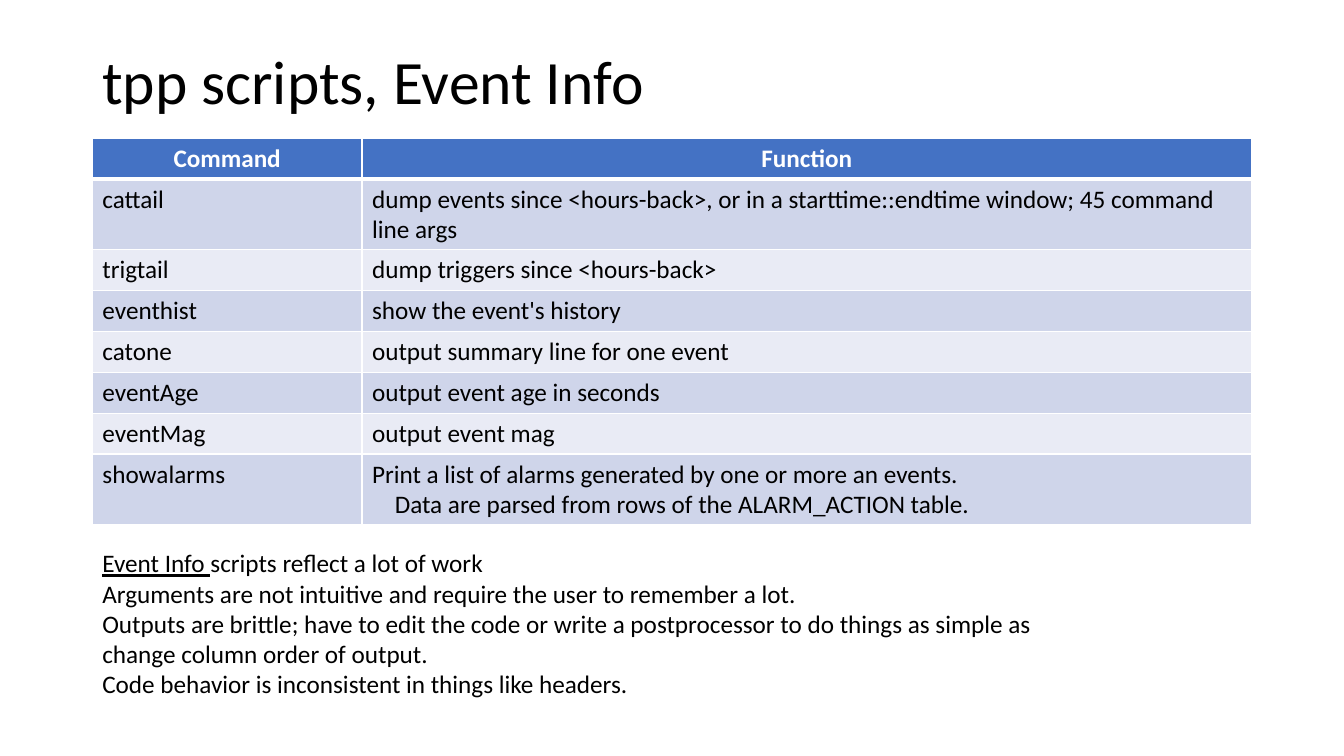
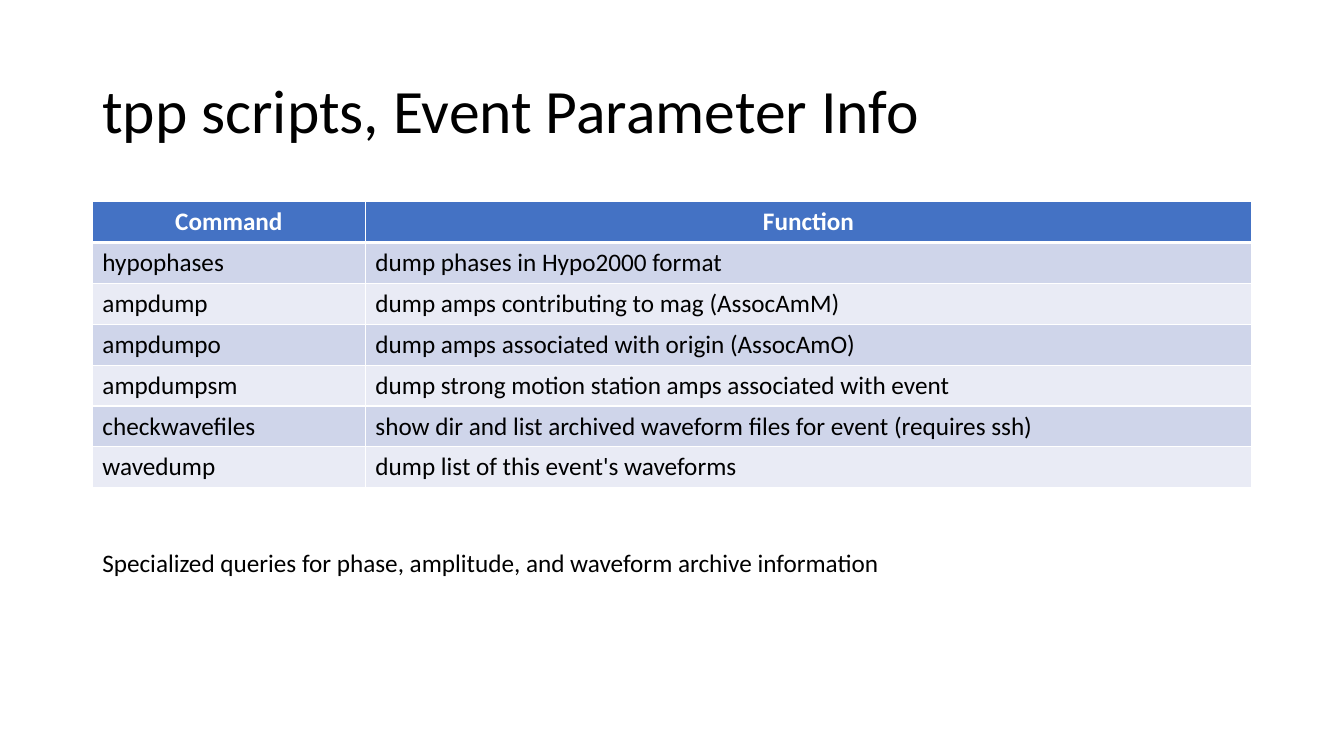
from lxml.etree import SubElement
from pptx import Presentation
from pptx.dml.color import RGBColor
from pptx.enum.text import MSO_ANCHOR, PP_ALIGN
from pptx.oxml.ns import qn
from pptx.util import Emu, Inches, Pt

COLORS = {
    "text": "000000",
    "header": "4472C4",
    "header_text": "FFFFFF",
    "border": "FFFFFF",
    "odd_row": "CFD5EA",
    "even_row": "E9EBF5",
}
FONT = "Calibri"
TITLE_SIZE, BODY_SIZE = 44, 18

# The slide is a grid of 160 columns by 90 rows of square units.
UNIT = Inches(1) / 12
LEFT, CONTENT_WIDTH = 11, 138
TITLE_TOP, NOTES_TOP = 4.8, 64.6
ROW_HEIGHT = 4.87
INDENT = 2.7

HEADINGS = ("Command", "Function")
SLIDES = [
    {
        "title": "tpp scripts, Event Info",
        "title_height": 10.65,
        "table_top": 16.45,
        "command_width": 32.1,
        "commands": [
            ("cattail", "dump events since <hours-back>, or in a "
                        "starttime::endtime window; 45 command line args"),
            ("trigtail", "dump triggers since <hours-back>"),
            ("eventhist", "show the event's history"),
            ("catone", "output summary line for one event"),
            ("eventAge", "output event age in seconds"),
            ("eventMag", "output event mag"),
            ("showalarms", "Print a list of alarms generated by one or more an events.",
             "Data are parsed from rows of the ALARM_ACTION table."),
        ],
        "notes_size": (118.2, 19.4),
        "notes": [
            [("Event Info ", True), ("scripts reflect a lot of work", False)],
            [("Arguments are not intuitive and require the user to remember a lot.", False)],
            [("Outputs are brittle; have to edit the code or write a postprocessor to do "
              "things as simple as change column order of output.", False)],
            [("Code behavior is inconsistent in things like headers.", False)],
        ],
    },
    {
        "title": "tpp scripts, Event Parameter Info",
        "title_height": 17.4,
        "table_top": 24,
        "command_width": 32.5,
        "commands": [
            ("hypophases", "dump phases in Hypo2000 format"),
            ("ampdump", "dump amps contributing to mag (AssocAmM)"),
            ("ampdumpo", "dump amps associated with origin (AssocAmO)"),
            ("ampdumpsm", "dump strong motion station amps associated with event"),
            ("checkwavefiles", "show dir and list archived waveform files for event "
                               "(requires ssh)"),
            ("wavedump", "dump list of this event's waveforms"),
        ],
        "notes_size": (109.6, 4.8),
        "notes": [
            [("Specialized queries for phase, amplitude, and waveform archive information",
              False)],
        ],
    },
]


def write(frame, paragraphs, size=BODY_SIZE, color="text", bold=False, align=PP_ALIGN.LEFT):
    """Fill a text frame; each paragraph is a list of (text, underlined) runs."""
    for index, runs in enumerate(paragraphs):
        paragraph = frame.add_paragraph() if index else frame.paragraphs[0]
        paragraph.alignment = align
        for text, underlined in runs:
            run = paragraph.add_run()
            run.text = text
            run.font.name = FONT
            run.font.size = Pt(size)
            run.font.bold = bold
            run.font.underline = underlined
            run.font.color.rgb = RGBColor.from_string(COLORS[color])


def set_borders(cell, top, bottom):
    """Draw all four cell borders, with the top and bottom widths in points."""
    properties = cell._tc.get_or_add_tcPr()
    widths = {"a:lnL": 1, "a:lnR": 1, "a:lnT": top, "a:lnB": bottom}
    for position, (tag, width) in enumerate(widths.items()):
        line = SubElement(properties, qn(tag), w=str(Pt(width)))
        fill = SubElement(line, qn("a:solidFill"))
        SubElement(fill, qn("a:srgbClr"), val=COLORS["border"])
        properties.insert(position, line)


prs = Presentation()
prs.slide_width, prs.slide_height = Emu(int(160 * UNIT)), Emu(int(90 * UNIT))

for content in SLIDES:
    slide = prs.slides.add_slide(prs.slide_layouts[6])

    title_area = (LEFT, TITLE_TOP, CONTENT_WIDTH, content["title_height"])
    title = slide.shapes.add_textbox(*(Emu(int(n * UNIT)) for n in title_area)).text_frame
    title.word_wrap = True
    title.vertical_anchor = MSO_ANCHOR.MIDDLE
    write(title, [[(content["title"], False)]], TITLE_SIZE)
    title.paragraphs[0].line_spacing = 0.9

    rows = [HEADINGS, *content["commands"]]
    table_area = (LEFT, content["table_top"], CONTENT_WIDTH, ROW_HEIGHT * len(rows))
    table = slide.shapes.add_table(
        len(rows), len(HEADINGS), *(Emu(int(n * UNIT)) for n in table_area)).table
    command_width = content["command_width"]
    for column, width in zip(table.columns, (command_width, CONTENT_WIDTH - command_width)):
        column.width = Emu(int(width * UNIT))

    for r, (command, *function) in enumerate(rows):
        table.rows[r].height = Emu(int(ROW_HEIGHT * UNIT))
        is_header = r == 0
        fill = "header" if is_header else "odd_row" if r % 2 else "even_row"
        for c, lines in enumerate(([command], function)):
            cell = table.cell(r, c)
            cell.fill.solid()
            cell.fill.fore_color.rgb = RGBColor.from_string(COLORS[fill])
            set_borders(cell, top=3 if r == 1 else 1, bottom=3 if is_header else 1)
            write(cell.text_frame, [[(line, False)] for line in lines],
                  color="header_text" if is_header else "text", bold=is_header,
                  align=PP_ALIGN.CENTER if is_header else PP_ALIGN.LEFT)
            for continuation in cell.text_frame.paragraphs[1:]:
                continuation._p.get_or_add_pPr().set("marL", str(int(INDENT * UNIT)))

    notes_area = (LEFT, NOTES_TOP, *content["notes_size"])
    notes = slide.shapes.add_textbox(*(Emu(int(n * UNIT)) for n in notes_area)).text_frame
    notes.word_wrap = True
    write(notes, content["notes"])

prs.save("out.pptx")
